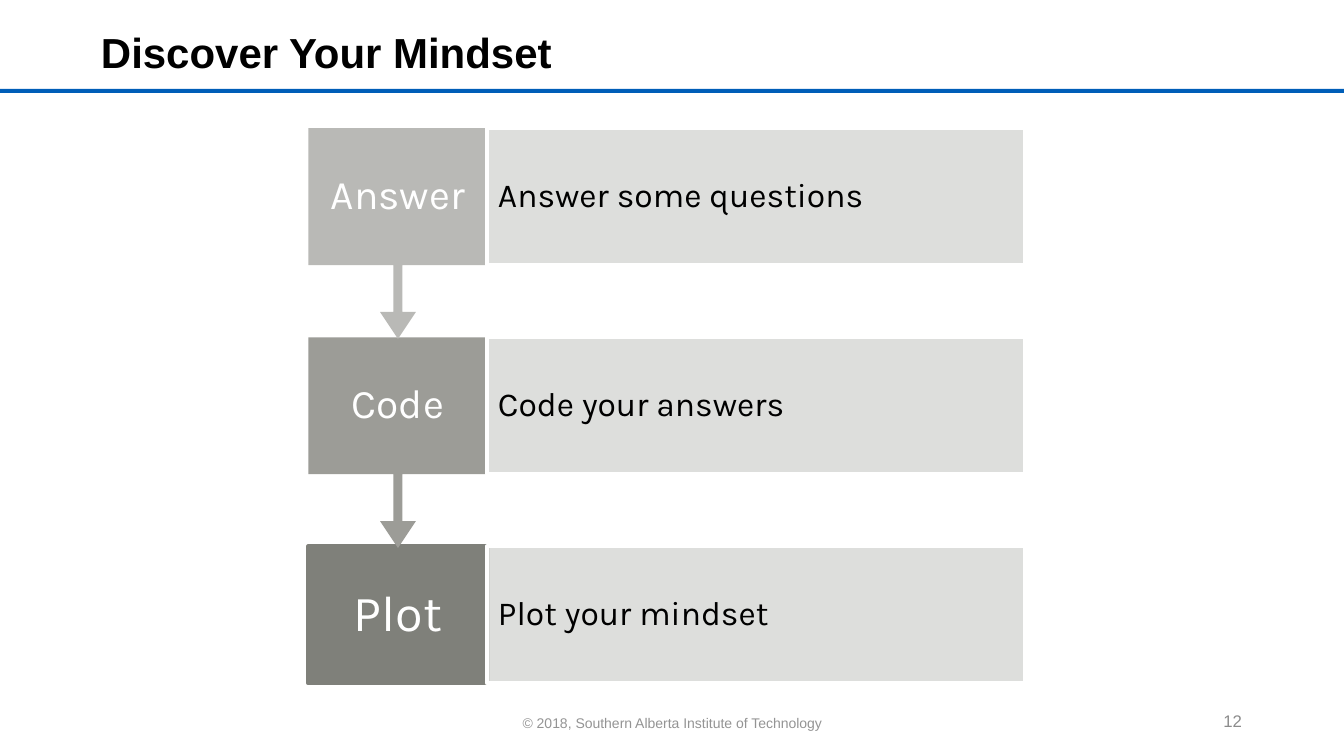
"""Build the "Discover Your Mindset" slide with its three-step vertical process."""
from dataclasses import dataclass

import lxml.etree
import pptx
import pptx.dml.color
import pptx.enum.shapes
import pptx.enum.text
import pptx.oxml.ns
import pptx.util

Cm = pptx.util.Cm
Pt = pptx.util.Pt
RGBColor = pptx.dml.color.RGBColor
MSO_SHAPE = pptx.enum.shapes.MSO_SHAPE
ALIGN = pptx.enum.text.PP_ALIGN
MIDDLE = pptx.enum.text.MSO_ANCHOR.MIDDLE

BLACK = RGBColor(0x00, 0x00, 0x00)
WHITE = RGBColor(0xFF, 0xFF, 0xFF)
RULE_BLUE = RGBColor(0x00, 0x5E, 0xB8)
FOOTER_GREY = RGBColor(0x94, 0x94, 0x94)
NUMBER_GREY = RGBColor(0x8C, 0x8C, 0x8C)
PANEL_GREY = RGBColor(0xDA, 0xDB, 0xD9)
ANSWER_GREY = RGBColor(0xB9, 0xB9, 0xB6)
CODE_GREY = RGBColor(0x9C, 0x9C, 0x97)
PLOT_GREY = RGBColor(0x7F, 0x80, 0x7A)

STEP_LEFT, STEP_WIDTH = 7.77, 4.52
PANEL_LEFT, PANEL_WIDTH = 12.27, 13.56
FIRST_TOP, STEP_PITCH = 3.23, 5.27
BOX_HEIGHT, CALLOUT_HEIGHT = 3.45, 5.31
CALLOUT_ADJUSTMENTS = (0.05, 0.1, 0.15, 0.65)


@dataclass(frozen=True)
class Step:
    """One stage of the process."""

    name: str
    description: str
    color: RGBColor
    size: int = 29


@dataclass(frozen=True)
class Box:
    """A rectangle in centimetres."""

    left: float
    top: float
    width: float
    height: float

    def lengths(self) -> tuple:
        """Return the four sides as slide lengths."""
        return Cm(self.left), Cm(self.top), Cm(self.width), Cm(self.height)


STEPS = (
    Step("Answer", "Answer some questions", ANSWER_GREY),
    Step("Code", "Code your answers", CODE_GREY),
    Step("Plot", "Plot your mindset", PLOT_GREY, 36),
)


def write(shape, text: str, font_name: str, size: int, color: RGBColor,
          align: ALIGN, bold: bool = False) -> None:
    """Put one formatted line of text in a shape."""
    frame = shape.text_frame
    frame.text = text
    frame.word_wrap = True
    frame.vertical_anchor = MIDDLE
    paragraph = frame.paragraphs[0]
    paragraph.alignment = align
    font = paragraph.runs[0].font
    font.name = font_name
    font.size = Pt(size)
    font.bold = bold
    font.color.rgb = color


def add_filled(slide, kind: MSO_SHAPE, box: Box, fill: RGBColor,
               line: RGBColor | None = None):
    """Add a flat preset shape, outlined when a line colour is given."""
    shape = slide.shapes.add_shape(kind, *box.lengths())
    shape.shadow.inherit = False
    shape.fill.solid()
    shape.fill.fore_color.rgb = fill
    if line is None:
        shape.line.fill.background()
    else:
        shape.line.color.rgb = line
        shape.line.width = Pt(2.75)
    return shape


def write_step_text(shape, text: str, size: int, color: RGBColor,
                    align: ALIGN, inset: float) -> None:
    """Write process text with its insets and tight line spacing."""
    write(shape, text, "Karla", size, color, align)
    frame = shape.text_frame
    frame.margin_left = frame.margin_right = Cm(inset)
    frame.margin_top = frame.margin_bottom = Cm(0.6)
    frame.paragraphs[0].line_spacing = 0.9


def add_step(slide, step: Step, index: int) -> None:
    """Draw a step's label and its description panel."""
    top = FIRST_TOP + index * STEP_PITCH
    if index == len(STEPS) - 1:
        label = add_filled(slide, MSO_SHAPE.RECTANGLE,
                           Box(STEP_LEFT, top, STEP_WIDTH, BOX_HEIGHT),
                           step.color, step.color)
    else:
        label = add_filled(slide, MSO_SHAPE.DOWN_ARROW_CALLOUT,
                           Box(STEP_LEFT, top, STEP_WIDTH, CALLOUT_HEIGHT),
                           step.color)
        for position, value in enumerate(CALLOUT_ADJUSTMENTS):
            label.adjustments[position] = value
    write_step_text(label, step.name, step.size, WHITE, ALIGN.CENTER, 0.33)

    panel = add_filled(slide, MSO_SHAPE.RECTANGLE,
                       Box(PANEL_LEFT, top, PANEL_WIDTH, BOX_HEIGHT),
                       PANEL_GREY, WHITE)
    qn = pptx.oxml.ns.qn
    panel_color = panel.fill._xPr.find(qn("a:solidFill")).find(qn("a:srgbClr"))
    lxml.etree.SubElement(panel_color, qn("a:alpha")).set("val", "90000")
    write_step_text(panel, step.description, 24, BLACK, ALIGN.LEFT, 0.28)


def add_note(slide, box: Box, text: str, size: int, color: RGBColor,
             align: ALIGN) -> None:
    """Add a small line of text at the foot of the slide."""
    note = slide.shapes.add_textbox(*box.lengths())
    write(note, text, "Arial", size, color, align)


def main() -> None:
    """Build and save the slide."""
    deck = pptx.Presentation()
    deck.slide_width, deck.slide_height = Cm(33.87), Cm(19.05)
    slide = deck.slides.add_slide(deck.slide_layouts[5])

    title = slide.shapes.title
    title.left, title.top, title.width, title.height = Box(
        2.29, 0.43, 24.82, 1.75).lengths()
    write(title, "Discover Your Mindset", "Arial", 30, BLACK, ALIGN.LEFT, True)

    add_filled(slide, MSO_SHAPE.RECTANGLE, Box(0, 2.24, 33.87, 0.1), RULE_BLUE)
    add_note(slide, Box(11.25, 17.86, 11.38, 0.69),
             "© 2018, Southern Alberta Institute of Technology",
             10, FOOTER_GREY, ALIGN.CENTER)
    add_note(slide, Box(23.93, 17.65, 7.62, 1.02), "12",
             12, NUMBER_GREY, ALIGN.RIGHT)

    for index, step in reversed(list(enumerate(STEPS))):
        add_step(slide, step, index)

    deck.save("out.pptx")


if __name__ == "__main__":
    main()
